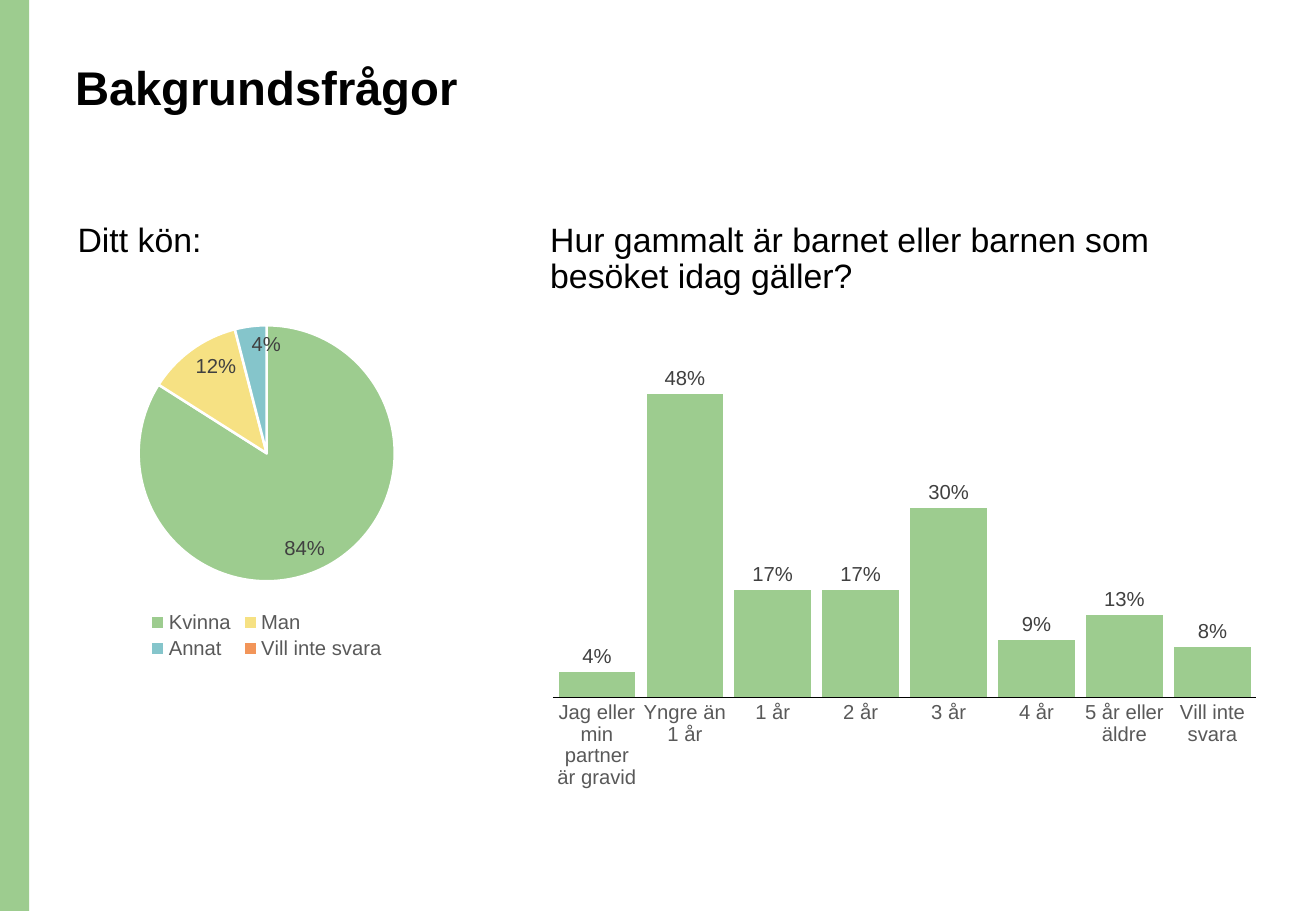
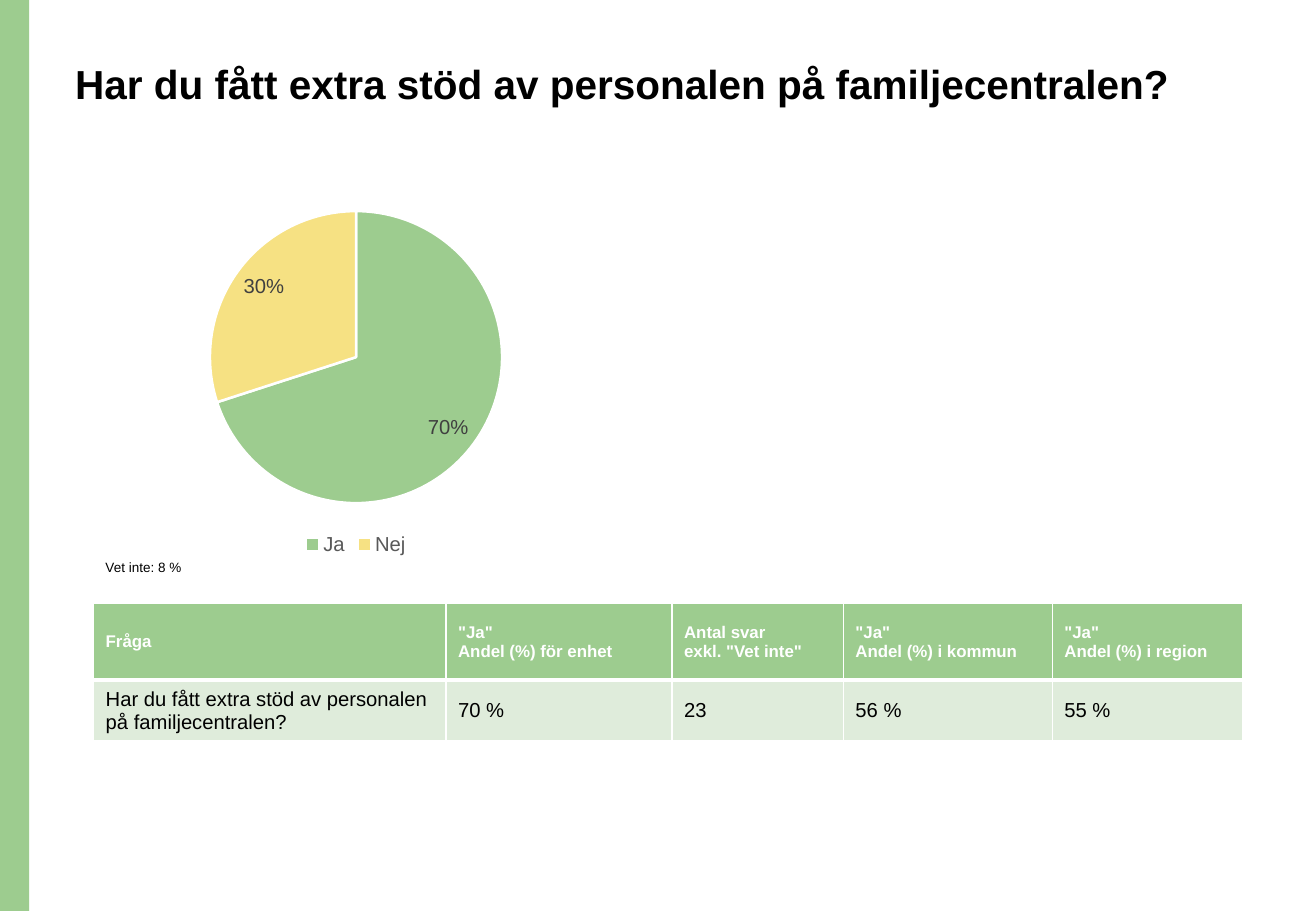
from dataclasses import dataclass

from lxml import etree
from pptx import Presentation
from pptx.chart.data import CategoryChartData
from pptx.dml.color import RGBColor
from pptx.enum import chart as charts, shapes, text
from pptx.oxml.ns import qn
from pptx.util import Inches, Pt

FONT = "Arial"
GREEN, YELLOW, TEAL, ORANGE = "9DCC8F", "F6E183", "85C5CB", "F29559"
PALE_GREEN, WHITE, BLACK = "DFECDB", "FFFFFF", "000000"
LABEL_GREY, LEGEND_GREY = "404040", "595959"
PIE_FORMAT = '[<0.01]"";[>0.01]0%'


@dataclass(frozen=True)
class Area:
    left: float
    top: float
    width: float
    height: float

    def lengths(self):
        return [Inches(n) for n in (self.left, self.top, self.width, self.height)]


@dataclass(frozen=True)
class Slice:
    label: str
    share: float
    color: str


@dataclass(frozen=True)
class Column:
    heading: str
    answer: str
    width: float


TITLE_AREA = Area(0.52, 0.48, 9.34, 1.02)
GENDERS = [
    Slice("Kvinna", 0.84, GREEN),
    Slice("Man", 0.12, YELLOW),
    Slice("Annat", 0.04, TEAL),
    Slice("Vill inte svara", 0, ORANGE),
]
CHILD_AGES = {
    "Jag eller min partner är gravid": 0.04,
    "Yngre än 1 år": 0.48,
    "1 år": 0.17,
    "2 år": 0.17,
    "3 år": 0.3,
    "4 år": 0.09,
    "5 år eller äldre": 0.13,
    "Vill inte svara": 0.08,
}
SUPPORT = [Slice("Ja", 0.7, GREEN), Slice("Nej", 0.3, YELLOW)]
SUPPORT_QUESTION = "Har du fått extra stöd av personalen på familjecentralen?"
SUPPORT_COLUMNS = [
    Column("Fråga", SUPPORT_QUESTION, 2.9),
    Column('"Ja"\nAndel (%) för enhet', "70 %", 1.86),
    Column('Antal svar\nexkl. "Vet inte"', "23", 1.41),
    Column('"Ja"\nAndel (%) i kommun', "56 %", 1.72),
    Column('"Ja"\nAndel (%) i region', "55 %", 1.57),
]


def rgb(color: str) -> RGBColor:
    return RGBColor.from_string(color)


def paint(item, color: str) -> None:
    item.fill.solid()
    item.fill.fore_color.rgb = rgb(color)


def style_font(font, size: float, color: str, bold: bool = False) -> None:
    font.name = FONT
    font.size = Pt(size)
    font.bold = bold
    font.color.rgb = rgb(color)


def write(frame, content: str, size: float, color: str = BLACK,
          bold: bool = False, spacing: float = 1.0) -> None:
    """Fill a text frame with one paragraph per line of content."""
    frame.word_wrap = True
    for index, line in enumerate(content.split("\n")):
        para = frame.add_paragraph() if index else frame.paragraphs[0]
        para.line_spacing = spacing
        span = para.add_run()
        span.text = line
        style_font(span.font, size, color, bold)


def add_text(page, area: Area, content: str, size: float,
             bold: bool = False, spacing: float = 0.9) -> None:
    box = page.shapes.add_textbox(*area.lengths())
    write(box.text_frame, content, size, bold=bold, spacing=spacing)


def add_page(deck, title: str, title_size: float):
    """Add a blank page with the green side band and a title."""
    page = deck.slides.add_slide(deck.slide_layouts[6])
    band = page.shapes.add_shape(shapes.MSO_SHAPE.RECTANGLE, 0, 0,
                                 Inches(0.24), deck.slide_height)
    band.shadow.inherit = False
    paint(band, GREEN)
    band.line.fill.background()
    add_text(page, TITLE_AREA, title, title_size, bold=True)
    return page


def add_chart(page, kind, area: Area, labels, values, number_format: str, position):
    """Add a one-series chart with value labels."""
    data = CategoryChartData()
    data.categories = labels
    data.add_series("Series 1", values)
    chart = page.shapes.add_chart(kind, *area.lengths(), data).chart
    style_font(chart.font, 10, BLACK)
    chart.has_title = False
    chart.has_legend = False
    plot = chart.plots[0]
    plot.has_data_labels = True
    tags = plot.data_labels
    tags.show_value = True
    tags.show_percentage = False
    tags.number_format = number_format
    tags.number_format_is_linked = False
    tags.position = position
    style_font(tags.font, 12, LABEL_GREY)
    return chart


def add_pie(page, area: Area, slices: list[Slice]) -> None:
    chart = add_chart(page, charts.XL_CHART_TYPE.PIE, area,
                      [part.label for part in slices],
                      [part.share for part in slices],
                      PIE_FORMAT, charts.XL_LABEL_POSITION.INSIDE_END)
    chart.plots[0].vary_by_categories = True
    for index, part in enumerate(slices):
        look = chart.series[0].points[index].format
        paint(look, part.color)
        look.line.color.rgb = rgb(WHITE)
        look.line.width = Pt(1.5)
    chart.has_legend = True
    chart.legend.position = charts.XL_LEGEND_POSITION.BOTTOM
    chart.legend.include_in_layout = False
    style_font(chart.legend.font, 12, LEGEND_GREY)


def add_columns(page, area: Area, shares: dict[str, float]) -> None:
    chart = add_chart(page, charts.XL_CHART_TYPE.COLUMN_CLUSTERED, area,
                      list(shares), list(shares.values()),
                      "0%", charts.XL_LABEL_POSITION.OUTSIDE_END)
    plot = chart.plots[0]
    plot.vary_by_categories = False
    plot.gap_width = 15
    plot.overlap = -27
    paint(plot.series[0].format, GREEN)
    heights = chart.value_axis
    heights.minimum_scale, heights.maximum_scale = 0, 0.6
    heights.has_major_gridlines = False
    heights.visible = False
    names = chart.category_axis
    names.major_tick_mark = charts.XL_TICK_MARK.NONE
    names.format.line.color.rgb = rgb(BLACK)
    names.format.line.width = Pt(0.75)
    style_font(names.tick_labels.font, 12, LEGEND_GREY)


def set_borders(cell, top: float, bottom: float) -> None:
    """Draw white borders, with the fill kept after them as the schema asks."""
    properties = cell._tc.get_or_add_tcPr()
    widths = {"a:lnL": 1, "a:lnR": 1, "a:lnT": top, "a:lnB": bottom}
    for index, (tag, width) in enumerate(widths.items()):
        line = etree.Element(qn(tag), w=str(Pt(width)))
        fill = etree.SubElement(line, qn("a:solidFill"))
        etree.SubElement(fill, qn("a:srgbClr"), val=WHITE)
        properties.insert(index, line)


def fill_cell(cell, content: str, size: float, color: str, fill: str,
              bold: bool, top: float, bottom: float) -> None:
    cell.vertical_anchor = text.MSO_ANCHOR.MIDDLE
    paint(cell, fill)
    set_borders(cell, top, bottom)
    write(cell.text_frame, content, size, color, bold)


def add_answers(page, area: Area, columns: list[Column]) -> None:
    table = page.shapes.add_table(2, len(columns), *area.lengths()).table
    table.rows[0].height = Inches(0.63)
    table.rows[1].height = Inches(area.height - 0.63)
    for index, column in enumerate(columns):
        table.columns[index].width = Inches(column.width)
        fill_cell(table.cell(0, index), column.heading, 10, WHITE, GREEN, True, 1, 3)
        fill_cell(table.cell(1, index), column.answer, 12, BLACK, PALE_GREEN, False, 3, 1)


def main() -> None:
    deck = Presentation()
    deck.slide_width, deck.slide_height = Inches(10.83), Inches(7.5)

    background = add_page(deck, "Bakgrundsfrågor", 28)
    add_text(background, Area(0.54, 1.79, 4.58, 0.46), "Ditt kön:", 20)
    add_text(background, Area(4.43, 1.79, 6.03, 0.74),
             "Hur gammalt är barnet eller barnen som besöket idag gäller?", 20)
    add_pie(background, Area(0.53, 2.54, 3.33, 2.93), GENDERS)
    add_columns(background, Area(4.43, 2.54, 6.03, 4.03), CHILD_AGES)

    support = add_page(deck, SUPPORT_QUESTION, 24)
    add_pie(support, Area(1.22, 1.6, 3.42, 3.01), SUPPORT)
    add_answers(support, Area(0.77, 4.97, 9.46, 1.09), SUPPORT_COLUMNS)
    add_text(support, Area(0.77, 4.49, 2.1, 0.48), "Vet inte: 8 %", 8, spacing=1.5)

    deck.save("out.pptx")


if __name__ == "__main__":
    main()
